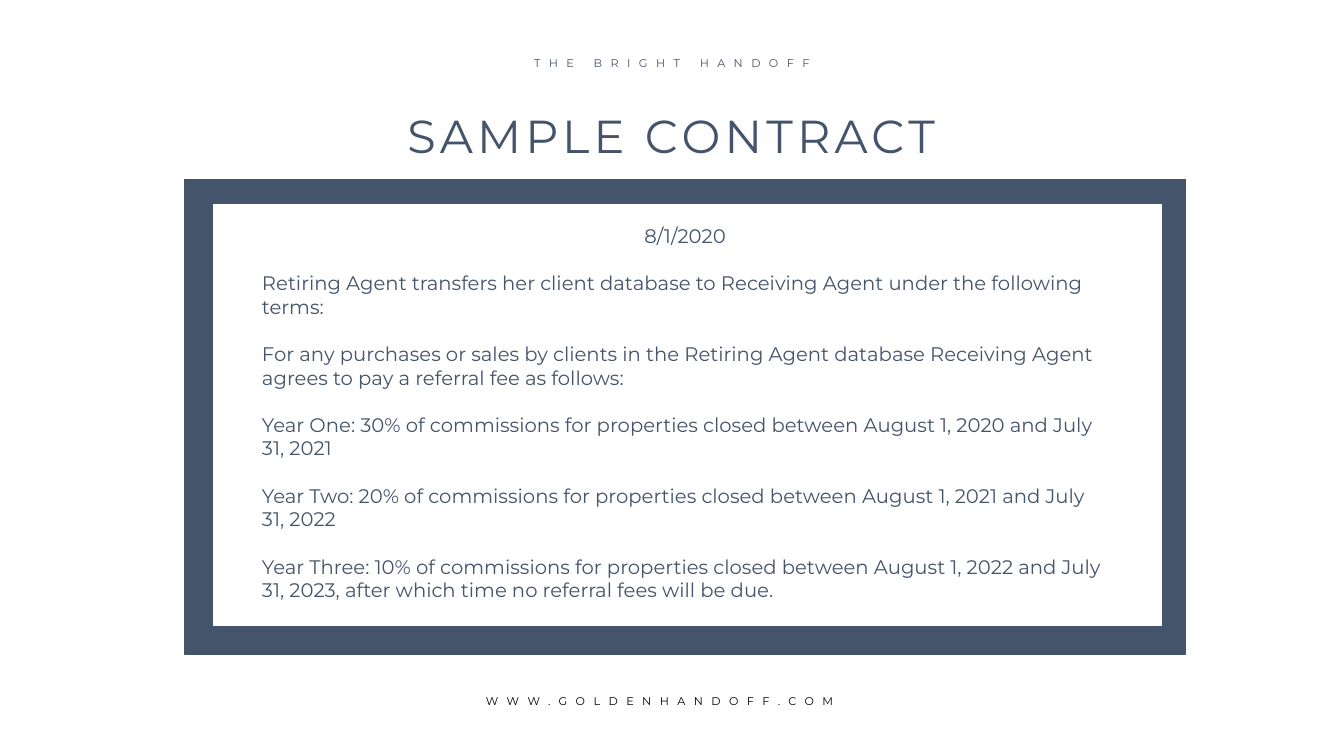
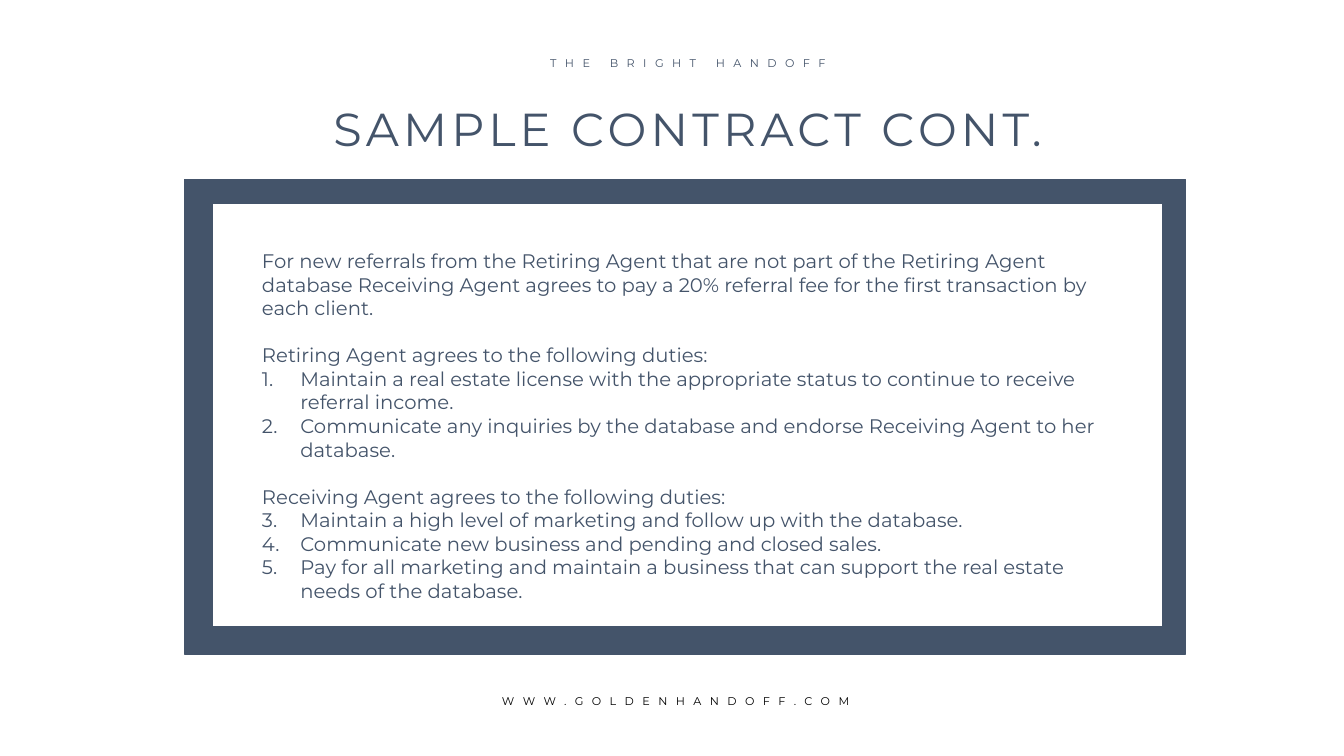
from lxml import etree
from pptx import Presentation
from pptx.dml.color import RGBColor
from pptx.enum.shapes import MSO_SHAPE
from pptx.enum.text import MSO_ANCHOR, MSO_AUTO_SIZE, PP_ALIGN
from pptx.oxml.ns import qn
from pptx.util import Inches, Pt

RECT = MSO_SHAPE.RECTANGLE
TOP = MSO_ANCHOR.TOP
FIXED = MSO_AUTO_SIZE.NONE
LEFT, MID = PP_ALIGN.LEFT, PP_ALIGN.CENTER

FONT = "Montserrat"
SLATE, WHITE, BLACK = "44546A", "FFFFFF", "000000"
GAP = 17  # points, one line of body text
HANG = 0.38

BRAND = "THE BRIGHT HANDOFF"
SITE = "WWW.GOLDENHANDOFF.COM"
FRAMES = [((1.83, 1.78, 9.93, 4.71), SLATE), ((2.11, 2.02, 9.42, 4.2), WHITE)]

# shift moves the header and footer sideways.
# A body item is (kind, text); a number as kind is where its list begins.
SLIDES = [
    dict(
        title="SAMPLE CONTRACT", place=(3.73, 1.01, 5.86, 0.66),
        shift=0, top=2.17,
        body=[
            ("date", "8/1/2020"),
            ("para", "Retiring Agent transfers her client database to Receiving Agent "
                     "under the following terms:"),
            ("para", "For any purchases or sales by clients in the Retiring Agent database "
                     "Receiving Agent agrees to pay a referral fee as follows:"),
            ("para", "Year One: 30% of commissions for properties closed between "
                     "August 1, 2020 and July 31, 2021"),
            ("para", "Year Two: 20% of commissions for properties closed between "
                     "August 1, 2021 and July 31, 2022"),
            ("para", "Year Three: 10% of commissions for properties closed between "
                     "August 1, 2022 and July 31, 2023, after which time no referral fees "
                     "will be due."),
        ]),
    dict(
        title="SAMPLE CONTRACT CONT.", place=(2.81, 0.95, 8.03, 0.66),
        shift=0.16, top=2.42,
        body=[
            ("para", "For new referrals from the Retiring Agent that are not part of the "
                     "Retiring Agent database Receiving Agent agrees to pay a 20% referral "
                     "fee for the first transaction by each client."),
            ("para", "Retiring Agent agrees to the following duties:"),
            (1, "Maintain a real estate license with the appropriate status to continue to "
                "receive referral income."),
            (1, "Communicate any inquiries by the database and endorse Receiving Agent to "
                "her database."),
            ("para", "Receiving Agent agrees to the following duties:"),
            (3, "Maintain a high level of marketing and follow up with the database."),
            (3, "Communicate new business and pending and closed sales."),
            (3, "Pay for all marketing and maintain a business that can support the real "
                "estate needs of the database."),
        ]),
]


def rgb(code):
    return RGBColor.from_string(code)


def put(shape, place):
    shape.left, shape.top, shape.width, shape.height = map(Inches, place)


def setup(shape):
    """Wrap the shape's text from its top edge and return the text frame."""
    frame = shape.text_frame
    frame.word_wrap = True
    frame.auto_size = FIXED
    frame.vertical_anchor = TOP
    return frame


def write(para, text, size, color=SLATE, align=LEFT, track=0):
    """Add one run; track is the letter spacing in points."""
    para.alignment = align
    run = para.add_run()
    run.text = text
    run.font.name, run.font.size = FONT, Pt(size)
    run.font.color.rgb = rgb(color)
    if track:
        run._r.get_or_add_rPr().set("spc", str(track * 100))


def number(para, start):
    """Number a paragraph with a hanging indent, in a list that begins at start."""
    props = para._p.get_or_add_pPr()
    props.set("marL", str(Inches(HANG)))
    props.set("indent", str(-Inches(HANG)))
    etree.SubElement(props, qn("a:buFont"), typeface="+mj-lt")
    etree.SubElement(props, qn("a:buAutoNum"), type="arabicPeriod", startAt=str(start))


def label(slide, place, text, color, align):
    box = slide.shapes.add_textbox(*map(Inches, place))
    write(setup(box).paragraphs[0], text, 8, color, align, 6)


def panel(slide, place, color):
    shape = slide.shapes.add_shape(RECT, *map(Inches, place))
    shape.shadow.inherit = False
    shape.fill.solid()
    shape.fill.fore_color.rgb = rgb(color)
    shape.line.color.rgb = rgb(SLATE)
    shape.line.width = Pt(1)


def fill_body(slide, top, items):
    box = slide.shapes.add_textbox(*map(Inches, (2.5, top, 8.59, 6.05 - top)))
    frame = setup(box)
    for i, (kind, text) in enumerate(items):
        para = frame.paragraphs[0] if i == 0 else frame.add_paragraph()
        listed = isinstance(kind, int)
        if i and not listed:
            para.space_before = Pt(GAP)
        if listed:
            number(para, kind)
        write(para, text, 14, align=MID if kind == "date" else LEFT)


def build(deck, data):
    slide = deck.slides.add_slide(deck.slide_layouts[5])
    title = slide.shapes.title
    put(title, data["place"])
    write(setup(title).paragraphs[0], data["title"], 33, align=MID, track=3)
    shift = data["shift"]
    label(slide, (4.95 + shift, 0.51, 3.43, 0.24), BRAND, SLATE, MID)
    for place, color in FRAMES:
        panel(slide, place, color)
    fill_body(slide, data["top"], data["body"])
    label(slide, (4.72 + shift, 6.84, 3.88, 0.24), SITE, BLACK, LEFT)


def main():
    deck = Presentation()
    deck.slide_width, deck.slide_height = Inches(13.33), Inches(7.5)
    for data in SLIDES:
        build(deck, data)
    deck.save("out.pptx")


if __name__ == "__main__":
    main()
